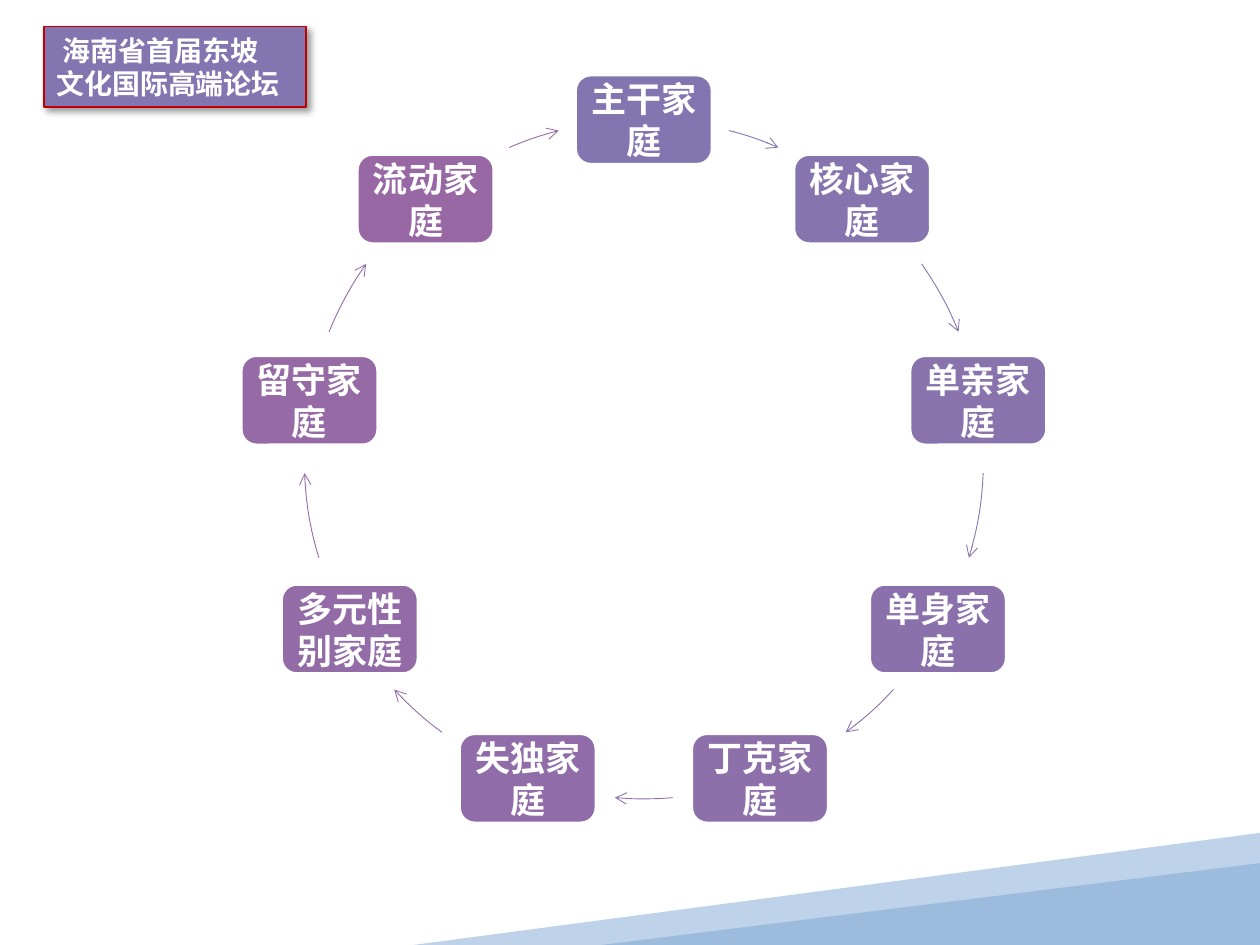
"""Build a slide showing nine family types in a clockwise cycle."""
from dataclasses import dataclass
from math import cos, radians, sin

from lxml import etree
from pptx import Presentation
from pptx.dml.color import RGBColor
from pptx.enum.shapes import MSO_SHAPE
from pptx.enum.text import MSO_ANCHOR, PP_ALIGN
from pptx.oxml import parse_xml
from pptx.oxml.ns import nsdecls, qn
from pptx.util import Inches, Pt

ARC = MSO_SHAPE.ARC
RECTANGLE = MSO_SHAPE.RECTANGLE
ROUNDED = MSO_SHAPE.ROUNDED_RECTANGLE
TRIANGLE = MSO_SHAPE.ISOSCELES_TRIANGLE
MIDDLE = MSO_ANCHOR.MIDDLE
CENTER = PP_ALIGN.CENTER
LEFT = PP_ALIGN.LEFT


@dataclass(frozen=True)
class Theme:
    font: str = "Noto Sans CJK SC"
    white: str = "FFFFFF"
    banner: str = "8376B0"
    banner_line: str = "C00000"
    light_wedge: str = "BED2E9"
    dark_wedge: str = "9DBCDD"
    cycle: tuple = ("8376B0", "8674AE", "8873AD", "8B71AB", "8D6FAA",
                    "906DA8", "936CA7", "966AA5", "9868A4")
    family_size: int = 20
    banner_size: int = 16
    leading: float = 1.2


theme = Theme()
presentation = Presentation()
presentation.slide_width = Inches(10)
presentation.slide_height = Inches(7.5)
COLUMN = presentation.slide_width // 100
ROW = presentation.slide_height // 75
slide = presentation.slides.add_slide(presentation.slide_layouts[6])


def add_cell_shape(kind, left, top, width, height, fill=None, line=None, weight=1):
    shape = slide.shapes.add_shape(kind, round(left * COLUMN), round(top * ROW),
                                   round(width * COLUMN), round(height * ROW))
    shape.shadow.inherit = False
    if fill:
        shape.fill.solid()
        shape.fill.fore_color.rgb = RGBColor.from_string(fill)
    else:
        shape.fill.background()
    if line:
        shape.line.color.rgb = RGBColor.from_string(line)
        shape.line.width = Pt(weight)
    else:
        shape.line.fill.background()
    return shape


def write_lines(shape, lines, size, alignment):
    frame = shape.text_frame
    frame.word_wrap = True
    frame.vertical_anchor = MIDDLE
    frame.text = "\n".join(lines)
    for paragraph in frame.paragraphs:
        paragraph.alignment = alignment
        paragraph.line_spacing = Pt(round(size * theme.leading))
        font = paragraph.font
        font.name, font.size, font.bold = theme.font, Pt(size), True
        font.color.rgb = RGBColor.from_string(theme.white)
        for run in paragraph.runs:
            properties = run._r.get_or_add_rPr()
            etree.SubElement(properties, qn("a:ea"), typeface=theme.font)
    return frame


builder = slide.shapes.build_freeform(100 * COLUMN, round(66.1 * ROW))
builder.add_line_segments([(round(column * COLUMN), round(row * ROW)) for column, row in
                           ((100, 74.4), (67.3, 75), (32.8, 75))])
wedge = builder.convert_to_shape()
wedge.shadow.inherit = False
wedge.fill.solid()
wedge.fill.fore_color.rgb = RGBColor.from_string(theme.light_wedge)
wedge.line.fill.background()
front_wedge = add_cell_shape(TRIANGLE, 47.7, 68.5, 52.3, 6.5, theme.dark_wedge)
front_wedge.adjustments[0] = 1

families = ("主干家庭", "核心家庭", "单亲家庭", "单身家庭", "丁克家庭",
            "失独家庭", "多元性别家庭", "留守家庭", "流动家庭")
center_column, center_row, radius = 51.1, 36.45, 26.95
box_width, box_height = 10.75, 7
right_arcs = [(284.52, 293.36), (324.88, 337.95), (2.35, 16.86), (42.69, 53.53)]
left_arcs = [((540 - end) % 360, (540 - start) % 360) for start, end in reversed(right_arcs)]
arcs = right_arcs + [(85.12, 94.88)] + left_arcs

for index, (family, color, arc_angles) in enumerate(zip(families, theme.cycle, arcs)):
    angle = radians(index * 360 / len(families) - 90)
    box = add_cell_shape(ROUNDED,
                         center_column + radius * cos(angle) - box_width / 2,
                         center_row + radius * sin(angle) - box_height / 2,
                         box_width, box_height, color, theme.white)
    frame = write_lines(box, [family], theme.family_size, CENTER)
    frame.margin_left = frame.margin_right = COLUMN // 2
    frame.margin_top = frame.margin_bottom = ROW // 2

    arc = add_cell_shape(ARC, center_column - radius, center_row - radius,
                         2 * radius, 2 * radius, line=color, weight=0.5)
    for position, degrees in enumerate(arc_angles):
        arc.adjustments[position] = degrees * 0.6
    etree.SubElement(arc.line._get_or_add_ln(), qn("a:tailEnd"), type="arrow")

banner = add_cell_shape(RECTANGLE, 3.5, 2.1, 20.8, 6.4, theme.banner, theme.banner_line)
write_lines(banner, [" 海南省首届东坡", "文化国际高端论坛"], theme.banner_size, LEFT)
effects = banner._element.spPr.find(qn("a:effectLst"))
effects.append(parse_xml(
    f'<a:outerShdw {nsdecls("a")} blurRad="{Pt(4)}" dist="{Pt(3)}" dir="2700000" '
    'algn="tl" rotWithShape="0"><a:srgbClr val="000000"><a:alpha val="40000"/>'
    '</a:srgbClr></a:outerShdw>'))

presentation.save("out.pptx")
